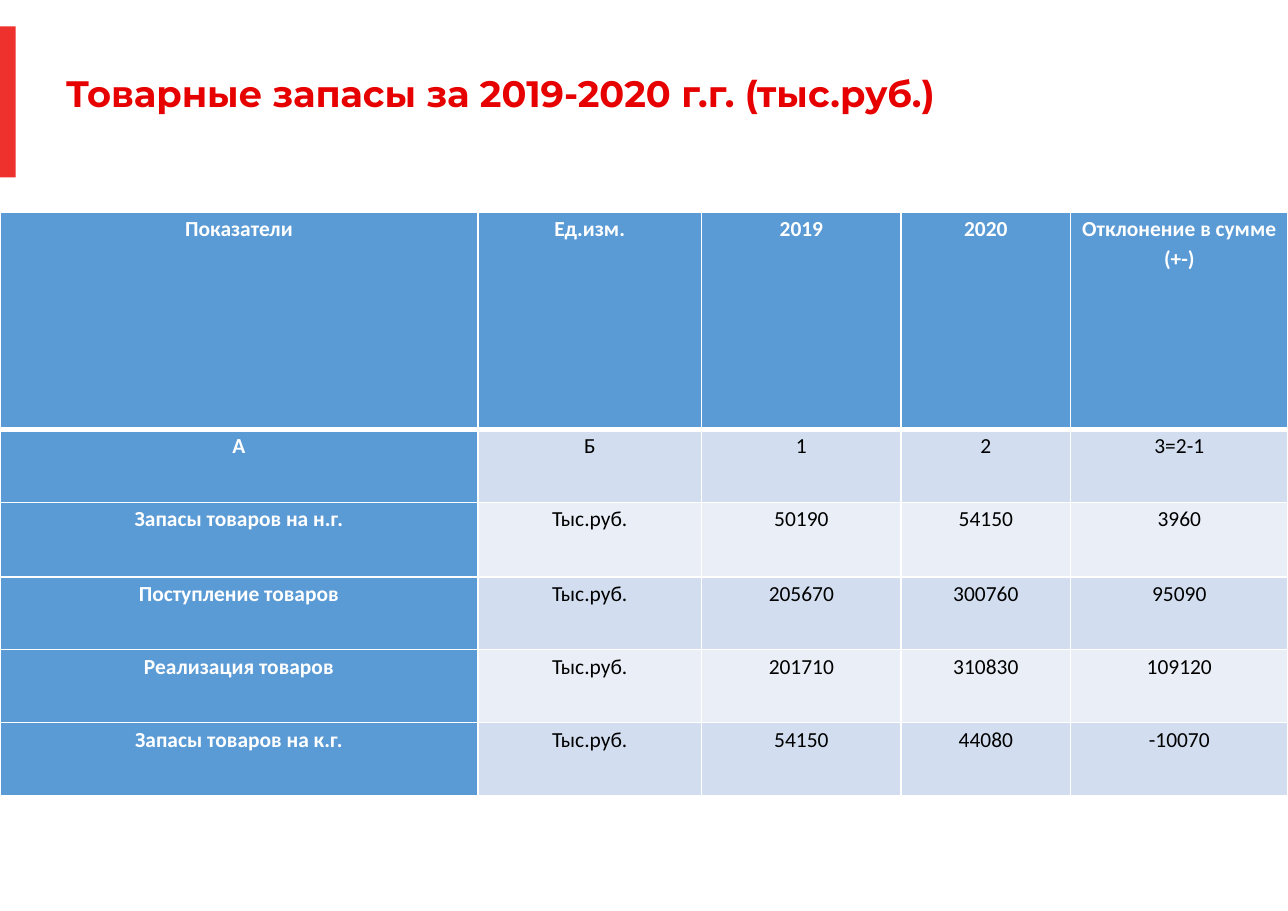
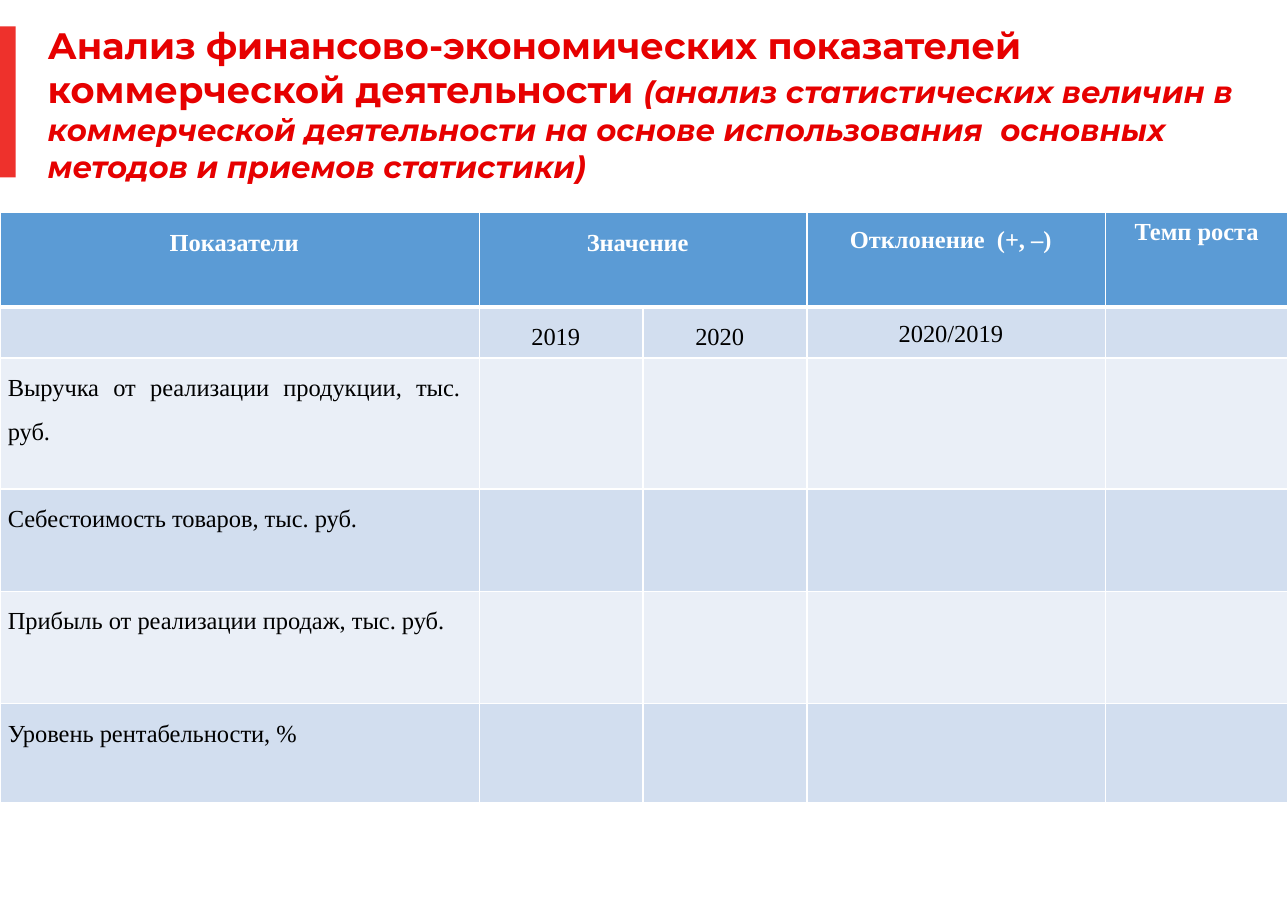
from lxml.etree import SubElement
from pptx import Presentation
from pptx.dml.color import RGBColor
from pptx.enum.shapes import MSO_SHAPE
from pptx.enum.text import MSO_ANCHOR, PP_ALIGN
from pptx.oxml.ns import qn
from pptx.util import Cm, Pt

PAGE_WIDTH, PAGE_HEIGHT = Cm(29.7), Cm(21)
TABLE_TOP = Cm(4.9)

ACCENT_RED = RGBColor(0xEE, 0x31, 0x2C)
TITLE_RED = RGBColor(0xE6, 0x00, 0x00)
HEADER_BLUE = RGBColor(0x5B, 0x9B, 0xD5)
BANDS = (RGBColor(0xD2, 0xDE, 0xEF), RGBColor(0xEA, 0xEF, 0xF7))
WHITE = RGBColor(0xFF, 0xFF, 0xFF)
BLACK = RGBColor(0x00, 0x00, 0x00)

TITLE_FONT = "Montserrat"
THOUSANDS = "Тыс.руб."

STOCK_ROWS = [
    ["Показатели", "Ед.изм.", "2019", "2020", "Отклонение в сумме (+-)"],
    ["А", "Б", "1", "2", "3=2-1"],
    ["Запасы товаров на н.г.", THOUSANDS, "50190", "54150", "3960"],
    ["Поступление товаров", THOUSANDS, "205670", "300760", "95090"],
    ["Реализация товаров", THOUSANDS, "201710", "310830", "109120"],
    ["Запасы товаров на к.г.", THOUSANDS, "54150", "44080", "-10070"],
]
INDICATOR_ROWS = [
    ["Показатели", "Значение", "", "Отклонение  (+, –)", "Темп роста"],
    ["", "2019", "2020", "2020/2019", ""],
    ["Выручка от реализации продукции, тыс. руб.", "", "", "", ""],
    ["Себестоимость товаров, тыс. руб.", "", "", "", ""],
    ["Прибыль от реализации продаж, тыс. руб.", "", "", "", ""],
    ["Уровень рентабельности, %", "", "", "", ""],
]


def format_font(font, name, size, color, bold=False, italic=False):
    font.name = name
    font.size = Pt(size)
    font.color.rgb = color
    font.bold = bold
    font.italic = italic


def add_titled_slide(presentation, left, top, width, height, title_parts):
    """Add a slide with the red marker; title_parts holds (text, size, italic)."""
    slide = presentation.slides.add_slide(presentation.slide_layouts[6])
    marker = slide.shapes.add_shape(MSO_SHAPE.RECTANGLE, 0, Cm(0.61), Cm(0.36), Cm(3.48))
    marker.shadow.inherit = False
    marker.fill.solid()
    marker.fill.fore_color.rgb = ACCENT_RED
    marker.line.fill.background()

    title = slide.shapes.add_textbox(left, top, width, height)
    text_frame = title.text_frame
    text_frame.word_wrap = True
    text_frame.vertical_anchor = MSO_ANCHOR.TOP
    text_frame.margin_left = text_frame.margin_right = 0
    text_frame.margin_top = text_frame.margin_bottom = 0
    for text, size, italic in title_parts:
        run = text_frame.paragraphs[0].add_run()
        run.text = text
        format_font(run.font, TITLE_FONT, size, TITLE_RED, bold=True, italic=italic)
    return slide


def set_borders(cell, top, bottom):
    """Draw white cell borders; top and bottom are widths in points."""
    properties = cell._tc.get_or_add_tcPr()
    for side, width in (("L", 1), ("R", 1), ("T", top), ("B", bottom)):
        line = SubElement(properties, qn(f"a:ln{side}"), w=str(Pt(width)))
        fill = SubElement(line, qn("a:solidFill"))
        SubElement(fill, qn("a:srgbClr"), val=str(WHITE))


def add_data_table(slide, rows, widths, heights, font_name, size, line_spacing,
                   right_margin=0.18, blue_first_column=False,
                   label_alignment=PP_ALIGN.CENTER):
    """Add a full-width banded table; widths, heights and margin are in cm."""
    frame = slide.shapes.add_table(len(rows), len(widths), 0, TABLE_TOP,
                                   PAGE_WIDTH, Cm(sum(heights)))
    table = frame.table
    table.first_row = table.horz_banding = False
    for column, width in zip(table.columns, widths):
        column.width = Cm(width)
    for row, height in zip(table.rows, heights):
        row.height = Cm(height)

    for row_index, texts in enumerate(rows):
        for column_index, text in enumerate(texts):
            cell = table.cell(row_index, column_index)
            is_header = row_index == 0
            is_label = column_index == 0 and not is_header
            is_blue = is_header or (is_label and blue_first_column)
            set_borders(cell, top=3 if row_index == 1 else 1, bottom=3 if is_header else 1)
            cell.fill.solid()
            cell.fill.fore_color.rgb = HEADER_BLUE if is_blue else BANDS[(row_index - 1) % 2]
            cell.margin_left, cell.margin_right = Cm(0.18), Cm(right_margin)
            cell.margin_top = cell.margin_bottom = 0
            cell.text_frame.text = text
            paragraph = cell.text_frame.paragraphs[0]
            paragraph.alignment = label_alignment if is_label else PP_ALIGN.CENTER
            paragraph.line_spacing = line_spacing
            format_font(paragraph.font, font_name, size, WHITE if is_blue else BLACK, is_blue)
            for run in paragraph.runs:
                format_font(run.font, font_name, size, WHITE if is_blue else BLACK, is_blue)
    return table


def add_stock_slide(presentation):
    slide = add_titled_slide(
        presentation, Cm(1.52), Cm(1.63), Cm(26), Cm(1.1),
        [("Товарные запасы за 2019-2020 г.г. (тыс.руб.)", 24, False)])
    add_data_table(slide, STOCK_ROWS, [11.02, 5.16, 4.6, 3.91, 5.01],
                   [5, 1.68, 1.72, 1.68, 1.68, 1.68], "Calibri", 14, 1.15,
                   blue_first_column=True)


def add_indicator_slide(presentation):
    slide = add_titled_slide(
        presentation, Cm(1.1), Cm(0.53), Cm(27.74), Cm(3.8),
        [("Анализ финансово-экономических показателей коммерческой деятельности ", 24, False),
         ("(анализ статистических величин в коммерческой деятельности на основе "
          "использования  основных методов и приемов статистики)", 20, True)])
    table = add_data_table(slide, INDICATOR_ROWS, [11.05, 3.78, 3.78, 6.88, 4.21],
                           [2.18, 1.17, 3.02, 2.36, 2.59, 2.29],
                           "Times New Roman", 16, 1.61, right_margin=0.43,
                           label_alignment=PP_ALIGN.JUSTIFY)
    table.cell(0, 1).merge(table.cell(0, 2))
    for row_index in range(2):
        table.cell(row_index, 3).text_frame.paragraphs[0].line_spacing = 1.5
    growth = table.cell(0, 4)
    growth.margin_left = growth.margin_right = Cm(0.25)
    growth.margin_top = Cm(0.13)
    growth.text_frame.paragraphs[0].line_spacing = 1.0


def main():
    presentation = Presentation()
    presentation.slide_width, presentation.slide_height = PAGE_WIDTH, PAGE_HEIGHT
    add_stock_slide(presentation)
    add_indicator_slide(presentation)
    presentation.save("out.pptx")


if __name__ == "__main__":
    main()
